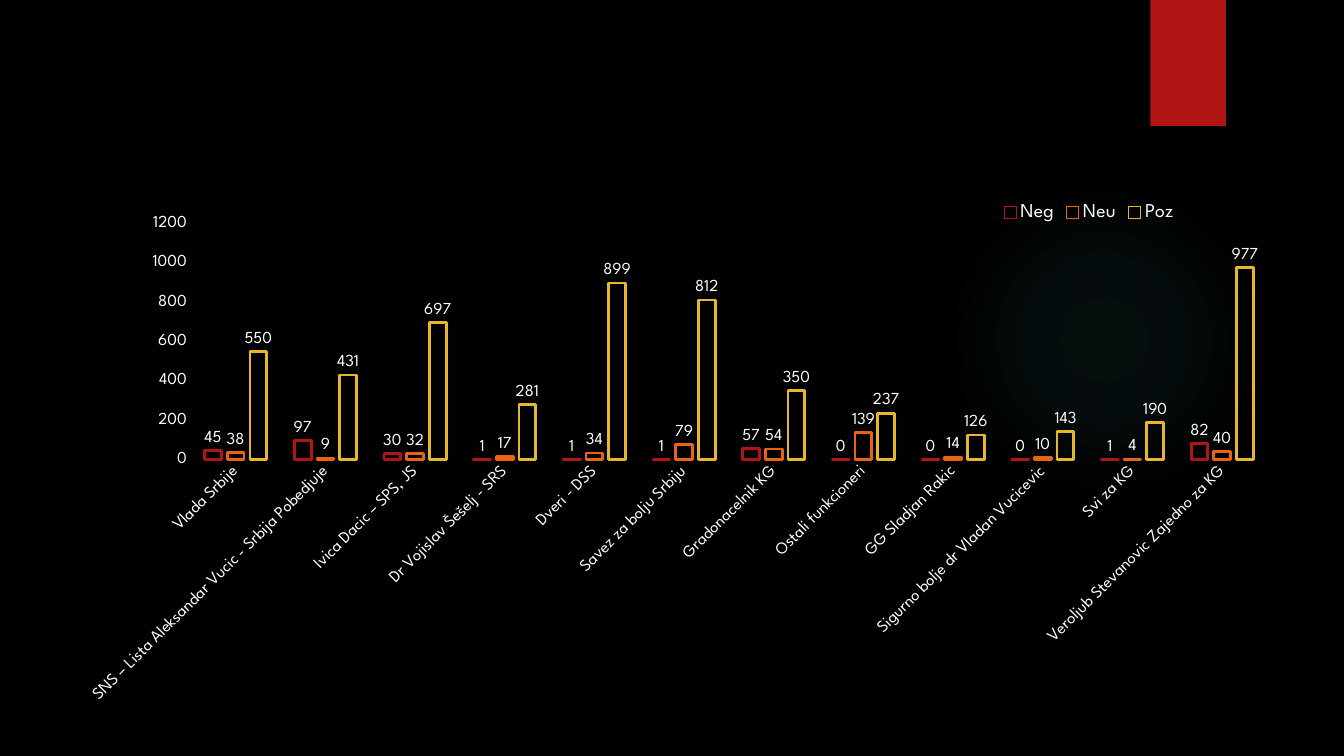
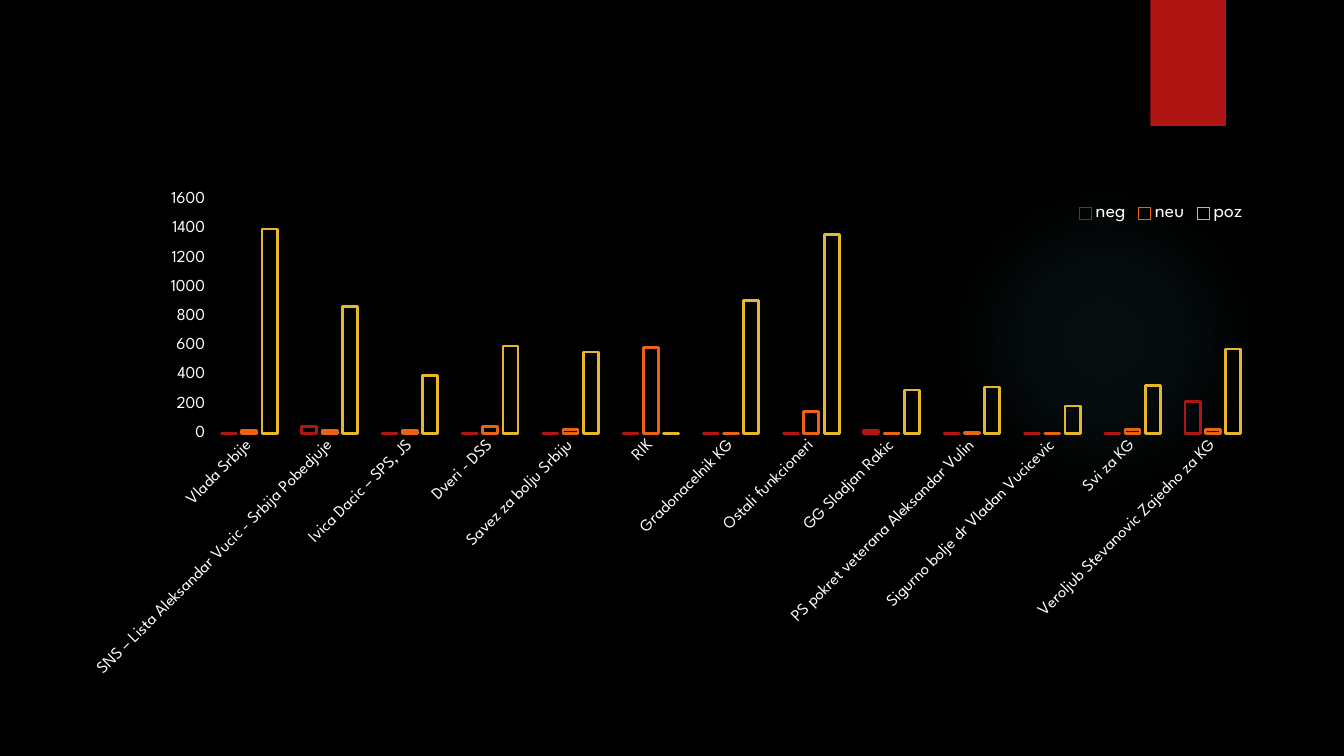
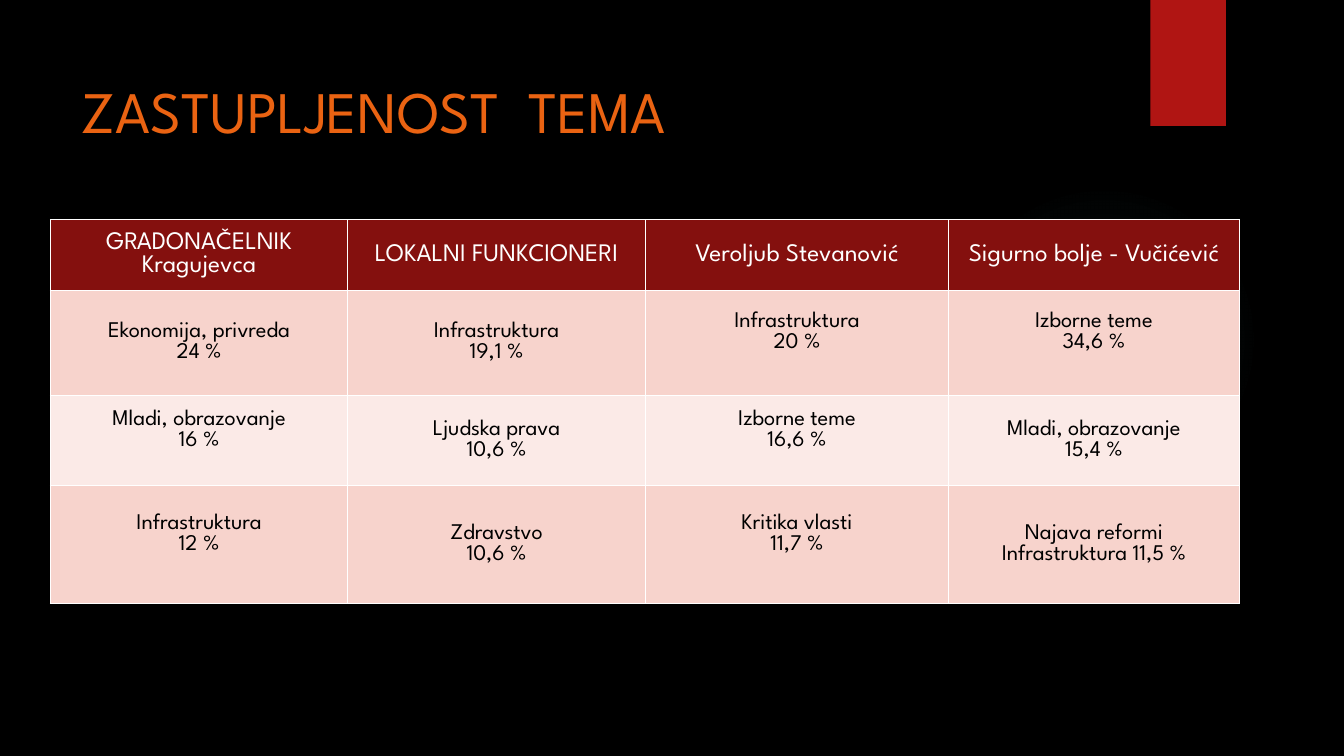
"""Build two charts of media coverage and a table of topics on a black theme."""
from lxml import etree
from pptx import Presentation
from pptx.chart.data import CategoryChartData
from pptx.dml.color import RGBColor
from pptx.enum.chart import XL_CHART_TYPE, XL_LABEL_POSITION, XL_LEGEND_POSITION, XL_TICK_MARK
from pptx.enum.shapes import MSO_SHAPE
from pptx.enum.text import MSO_ANCHOR, PP_ALIGN
from pptx.oxml import parse_xml
from pptx.oxml.ns import nsdecls, qn
from pptx.util import Inches, Pt

COLUMN = XL_CHART_TYPE.COLUMN_CLUSTERED
OUTER = XL_LABEL_POSITION.OUTSIDE_END
TOP_KEY = XL_LEGEND_POSITION.TOP
NO_TICK = XL_TICK_MARK.NONE
RECT, OVAL = MSO_SHAPE.RECTANGLE, MSO_SHAPE.OVAL
TOP, MIDDLE = MSO_ANCHOR.TOP, MSO_ANCHOR.MIDDLE
LEFT, CENTER = PP_ALIGN.LEFT, PP_ALIGN.CENTER

FONT = "League Spartan"
BLACK = RGBColor(0x00, 0x00, 0x00)
WHITE = RGBColor(0xFF, 0xFF, 0xFF)
RED = RGBColor(0xB0, 0x15, 0x13)
ORANGE = RGBColor(0xEA, 0x63, 0x12)
YELLOW = RGBColor(0xE6, 0xB7, 0x29)
TEAL = RGBColor(0x50, 0xB9, 0xC1)
MAROON = RGBColor(0x84, 0x10, 0x0E)
PINK = RGBColor(0xF7, 0xD3, 0xCC)
PALE = RGBColor(0xFB, 0xEA, 0xE7)


def style(font, size, color):
    font.name = FONT
    font.size = Pt(size)
    font.color.rgb = color


def place(node, spot, **sizes):
    for old in node.findall(qn("c:layout")):
        node.remove(old)
    layout = etree.Element(qn("c:layout"))
    manual = etree.SubElement(layout, qn("c:manualLayout"))
    if sizes:
        etree.SubElement(manual, qn("c:layoutTarget")).set("val", "inner")
    for tag in ("xMode", "yMode"):
        etree.SubElement(manual, qn("c:" + tag)).set("val", "edge")
    for tag, val in {"x": spot[0], "y": spot[1], **sizes}.items():
        etree.SubElement(manual, qn("c:" + tag)).set("val", str(val))
    node.insert(0 if sizes else 1, layout)


deck = Presentation()
deck.slide_width, deck.slide_height = Inches(13.33), Inches(7.5)
master = deck.slide_master
master.background.fill.solid()
master.background.fill.fore_color.rgb = BLACK
title_only, blank = deck.slide_layouts[5], deck.slide_layouts[6]

first = deck.slides.add_slide(blank)
glow = first.shapes.add_shape(OVAL, Inches(9.41), Inches(1.83), Inches(3.08), Inches(3.08))
glow.fill.background()
stops = "".join(
    f'<a:gs pos="{pos}000"><a:srgbClr val="{TEAL}"><a:alpha val="{alpha}000"/></a:srgbClr></a:gs>'
    for pos, alpha in ((0, 7), (36, 6), (69, 0)))
blend = parse_xml(
    f'<a:gradFill {nsdecls("a")}><a:gsLst>{stops}</a:gsLst><a:path path="circle">'
    '<a:fillToRect l="50000" t="50000" r="50000" b="50000"/></a:path></a:gradFill>')
props = glow.element.spPr
props.replace(props.find(qn("a:noFill")), blend)
band = first.shapes.add_shape(RECT, Inches(11.41), 0, Inches(0.75), Inches(1.25))
band.fill.solid()
band.fill.fore_color.rgb = RED
for order, shape in enumerate((glow, band), 2):
    shape.shadow.inherit = False
    shape.line.fill.background()
    master.shapes.element.insert(order, shape.element)

charts = [
    {
        "slide": first,
        "box": (0.68, 1.71, 12.13, 5.37),
        "plot": (0.1, 0.095, 0.88, 0.436),
        "key": (0.76, 0.05),
        "top": 1200,
        "labels": True,
        "cats": ["Vlada Srbije", "SNS – Lista Aleksandar Vucic - Srbija Pobedjuje",
                 "Ivica Dacic – SPS, JS", "Dr Vojislav Šešelj - SRS", "Dveri - DSS",
                 "Savez za bolju Srbiju", "Gradonacelnik KG", "Ostali funkcioneri",
                 "GG Sladjan Rakic", "Sigurno bolje dr Vladan Vucicevic", "Svi za KG",
                 "Veroljub Stevanovic Zajedno za KG"],
        "rows": {"Neg": [45, 97, 30, 1, 1, 1, 57, 0, 0, 0, 1, 82],
                 "Neu": [38, 9, 32, 17, 34, 79, 54, 139, 14, 10, 4, 40],
                 "Poz": [550, 431, 697, 281, 899, 812, 350, 237, 126, 143, 190, 977]},
    },
    {
        "slide": deck.slides.add_slide(blank),
        "box": (0.71, 1.48, 11.97, 5.35),
        "plot": (0.114, 0.094, 0.865, 0.434),
        "key": (0.83, 0.095),
        "top": 1600,
        "labels": False,
        "cats": ["Vlada Srbije", "SNS – Lista Aleksandar Vucic - Srbija Pobedjuje",
                 "Ivica Dacic – SPS, JS", "Dveri - DSS", "Savez za bolju Srbiju", "RIK",
                 "Gradonacelnik KG", "Ostali funkcioneri", "GG Sladjan Rakic",
                 "PS pokret veterana Aleksandar Vulin", "Sigurno bolje dr Vladan Vucicevic",
                 "Svi za KG", "Veroljub Stevanovic Zajedno za KG"],
        "rows": {"neg": [0, 50, 0, 0, 0, 0, 0, 0, 20, 0, 0, 0, 220],
                 "neu": [20, 20, 20, 50, 30, 590, 0, 150, 0, 10, 0, 30, 30],
                 "poz": [1400, 870, 400, 600, 560, 0, 910, 1360, 300, 320, 190, 330, 580]},
    },
]

for item in charts:
    data = CategoryChartData()
    data.categories = item["cats"]
    for name, vals in item["rows"].items():
        data.add_series(name, vals)
    box = [Inches(n) for n in item["box"]]
    chart = item["slide"].shapes.add_chart(COLUMN, *box, data).chart
    style(chart.font, 10, WHITE)
    chart.has_title = False
    chart.has_legend = True
    chart.legend.position = TOP_KEY
    chart.legend.include_in_layout = False
    style(chart.legend.font, 14, WHITE)

    plot = chart.plots[0]
    plot.gap_width, plot.overlap = 164, -35
    plot.vary_by_categories = False
    for series, color in zip(plot.series, (RED, ORANGE, YELLOW)):
        series.format.fill.background()
        series.format.line.color.rgb = color
        series.format.line.width = Pt(2)
        if item["labels"]:
            series.data_labels.show_value = True
            series.data_labels.position = OUTER
            style(series.data_labels.font, 12, WHITE)

    for axis in (chart.category_axis, chart.value_axis):
        axis.has_major_gridlines = False
        axis.major_tick_mark = axis.minor_tick_mark = NO_TICK
        axis.format.line.fill.background()
        style(axis.tick_labels.font, 12, WHITE)
    chart.value_axis.minimum_scale = 0
    chart.value_axis.maximum_scale = item["top"]
    chart.value_axis.major_unit = 200

    root = chart.element
    slant = root.find(".//" + qn("c:catAx")).find(".//" + qn("a:bodyPr"))
    slant.set("rot", "-2700000")
    slant.set("vert", "horz")
    x, y, w, h = item["plot"]
    place(root.find(".//" + qn("c:plotArea")), (x, y), w=w, h=h)
    place(root.find(".//" + qn("c:legend")), item["key"])

topics = deck.slides.add_slide(title_only)
title = topics.shapes.title
title.left, title.top = Inches(0.71), Inches(0.5)
title.width, title.height = Inches(10.29), Inches(1.53)
frame = title.text_frame
frame.text = "ZASTUPLJENOST  TEMA"
frame.vertical_anchor = TOP
frame.margin_top = Inches(0.24)
frame.paragraphs[0].alignment = LEFT
style(frame.paragraphs[0].runs[0].font, 42, ORANGE)

cells = [
    ["GRADONAČELNIK\nKragujevca", "LOKALNI FUNKCIONERI", "Veroljub Stevanović",
     "Sigurno bolje - Vučićević"],
    ["Ekonomija, privreda\n24 %", "Infrastruktura\n19,1 %", "Infrastruktura\n20 %",
     "Izborne teme\n34,6 %"],
    ["Mladi, obrazovanje\n16 %", "Ljudska prava\n10,6 %", "Izborne teme\n16,6 %",
     "Mladi, obrazovanje\n15,4 %"],
    ["Infrastruktura\n12 %", "Zdravstvo\n10,6 %", "Kritika vlasti\n11,7 %",
     "Najava reformi\nInfrastruktura 11,5 %"],
]
raised = {(1, 2), (1, 3), (2, 0), (2, 2), (3, 0), (3, 2)}
table = topics.shapes.add_table(
    4, 4, Inches(0.5), Inches(2.18), Inches(11.79), Inches(3.81)).table
table.horz_banding = False
for col, width in zip(table.columns, (2.95, 2.95, 3.01, 2.88)):
    col.width = Inches(width)
for row, height in zip(table.rows, (0.7, 1.04, 0.9, 1.17)):
    row.height = Inches(height)
for r, line in enumerate(cells):
    for c, text in enumerate(line):
        cell = table.cell(r, c)
        cell.text_frame.text = text
        cell.vertical_anchor = MIDDLE
        if (r, c) in raised:
            cell.margin_bottom = Inches(0.25)
        for para in cell.text_frame.paragraphs:
            para.alignment = CENTER
            style(para.runs[0].font, 16 if r else 18, BLACK if r else WHITE)
        for side in "LRTB":
            cell.text_frame._txBody.getparent().get_or_add_tcPr().append(parse_xml(
                f'<a:ln{side} {nsdecls("a")} w="12700"><a:solidFill>'
                f'<a:srgbClr val="{WHITE}"/></a:solidFill></a:ln{side}>'))
        cell.fill.solid()
        cell.fill.fore_color.rgb = (MAROON, PINK, PALE, PINK)[r]

deck.save("out.pptx")
